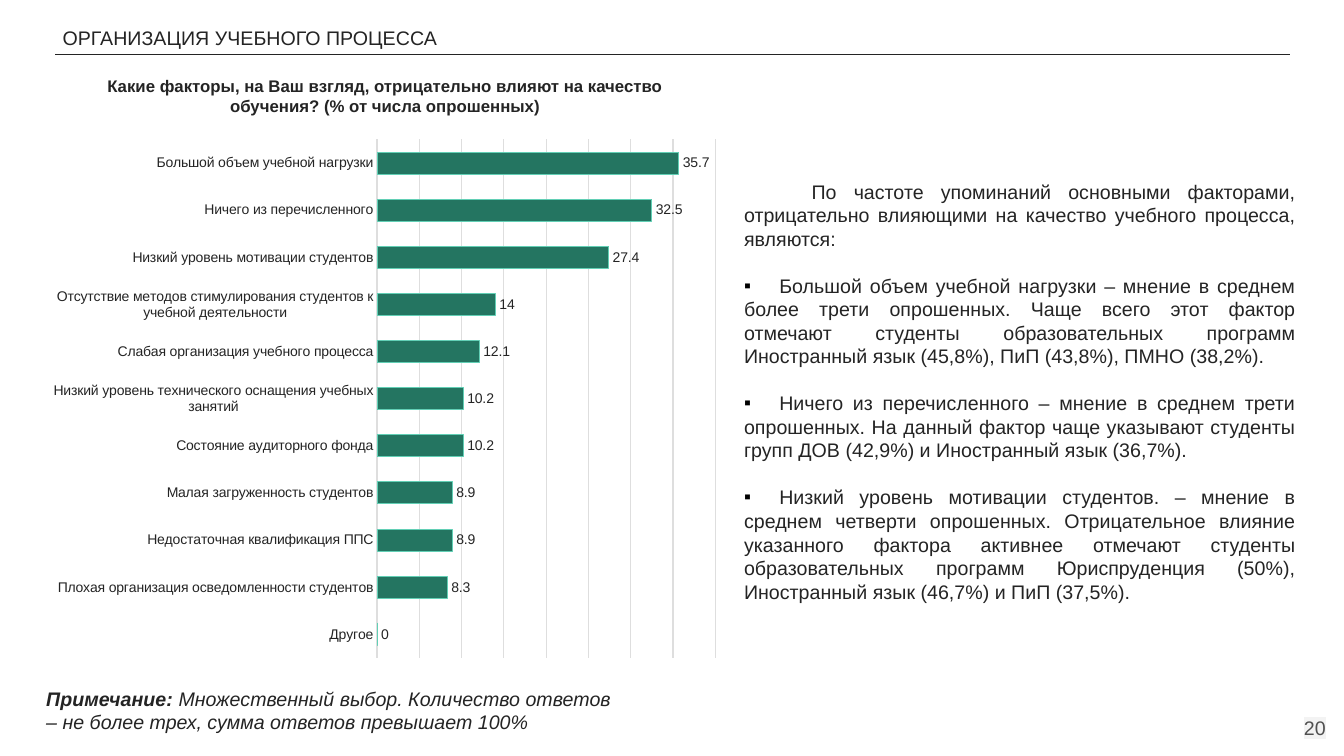
from lxml.etree import SubElement
from pptx import Presentation
from pptx.chart.data import CategoryChartData
from pptx.dml.color import RGBColor
from pptx.enum.chart import XL_CHART_TYPE as CT, XL_LABEL_POSITION as LP, XL_TICK_MARK as TM
from pptx.enum.shapes import MSO_CONNECTOR
from pptx.enum.text import MSO_ANCHOR as VA, MSO_AUTO_SIZE as FIT, PP_ALIGN as AL
from pptx.oxml import parse_xml
from pptx.oxml.ns import nsdecls, qn
from pptx.util import Inches, Pt

# Content
TITLE = "ОРГАНИЗАЦИЯ УЧЕБНОГО ПРОЦЕССА"
QUESTION = ("Какие факторы, на Ваш взгляд, отрицательно влияют на качество обучения? "
            "(% от числа опрошенных)")
FACTORS = [
    ("Большой объем учебной нагрузки", 35.7),
    ("Ничего из перечисленного", 32.5),
    ("Низкий уровень мотивации студентов", 27.4),
    ("Отсутствие методов стимулирования студентов к учебной деятельности", 14),
    ("Слабая организация учебного процесса", 12.1),
    ("Низкий уровень технического оснащения учебных занятий", 10.2),
    ("Состояние аудиторного фонда", 10.2),
    ("Малая загруженность студентов", 8.9),
    ("Недостаточная квалификация ППС", 8.9),
    ("Плохая организация осведомленности студентов", 8.3),
    ("Другое", 0),
]
INTRO = ("По частоте упоминаний основными факторами, отрицательно влияющими "
         "на качество учебного процесса, являются:")
FINDINGS = [
    "Большой объем учебной нагрузки – мнение в среднем более трети опрошенных. "
    "Чаще всего этот фактор отмечают студенты образовательных программ "
    "Иностранный язык (45,8%), ПиП (43,8%), ПМНО (38,2%).",
    "Ничего из перечисленного – мнение в среднем трети опрошенных. На данный фактор "
    "чаще указывают студенты групп ДОВ (42,9%) и Иностранный язык (36,7%).",
    "Низкий уровень мотивации студентов. – мнение в среднем четверти опрошенных. "
    "Отрицательное влияние указанного фактора активнее отмечают студенты "
    "образовательных программ Юриспруденция (50%), Иностранный язык (46,7%) и ПиП (37,5%).",
]
NOTE = ("Примечание:", " Множественный выбор. Количество ответов – не более трех, "
        "сумма ответов превышает 100%")
PAGE = "20"

# Theme and layout, lengths in inches
THEME = dict(font="Arial", ink="242424", page="505050", mark="F3F3F3", grid="DEDEDE",
             bar="247561", edge="62CFB5", bullet="000000",
             body=14, question=12, chart=10)
W, H = 13.33, 7.5
BOX = dict(
    title=(0.52, 0.16, 4.79, 0.27), question=(0.52, 0.51, 6.6, 0.71),
    chart=(0.22, 1.3, 7.03, 5.26), findings=(7.25, 1.42, 5.73, 5.68),
    note=(0.36, 6.57, 5.95, 0.77), page=(12.48, 6.93, 0.8, 0.57),
)
RULE = (0.55, 12.79, 0.54)
PLOT = dict(x=0.501, y=0.016, w=0.477, h=0.978)
INTRO_INDENT, BULLET_TAB = 0.67, 0.35


def rgb(name):
    return RGBColor.from_string(THEME[name])


def place(sp, box):
    for key, value in zip(("left", "top", "width", "height"), BOX[box]):
        setattr(sp, key, Inches(value))


def set_font(font, size="body", color="ink", **extra):
    for key, value in dict(name=THEME["font"], size=Pt(THEME[size]), **extra).items():
        setattr(font, key, value)
    font.color.rgb = rgb(color)


def set_line(line, color, width):
    line.color.rgb = rgb(color)
    line.width = Pt(width)


def set_frame(tf, side, top, anchor=VA.TOP):
    values = dict(word_wrap=True, auto_size=FIT.NONE, vertical_anchor=anchor,
                  margin_left=Inches(side), margin_right=Inches(side),
                  margin_top=Inches(top), margin_bottom=Inches(min(side, top)))
    for key, value in values.items():
        setattr(tf, key, value)


def text_box(box, side, top, anchor=VA.TOP):
    tf = slide.shapes.add_textbox(*map(Inches, BOX[box])).text_frame
    set_frame(tf, side, top, anchor)
    return tf


def write(p, text, align=AL.LEFT, **style):
    p.alignment = align
    r = p.add_run()
    r.text = text
    set_font(r.font, **style)
    return r


def add_bullet(p):
    pPr = p._p.get_or_add_pPr()
    pPr.set("marL", "0")
    pPr.set("indent", "0")
    color = SubElement(pPr, qn("a:buClr"))
    SubElement(color, qn("a:srgbClr"), val=THEME["bullet"])
    SubElement(pPr, qn("a:buFont"), typeface=THEME["font"])
    SubElement(pPr, qn("a:buChar"), char="▪")
    tabs = SubElement(pPr, qn("a:tabLst"))
    SubElement(tabs, qn("a:tab"), pos=str(Inches(BULLET_TAB)), algn="l")


prs = Presentation()
prs.slide_width, prs.slide_height = Inches(W), Inches(H)
slide = prs.slides.add_slide(prs.slide_layouts[5])

# Title and rule
title = slide.shapes.title
place(title, "title")
set_frame(title.text_frame, 0.1, 0.1)
write(title.text_frame.paragraphs[0], TITLE)
x1, x2, y = map(Inches, RULE)
rule = slide.shapes.add_connector(MSO_CONNECTOR.STRAIGHT, x1, y, x2, y)
set_line(rule.line, "ink", 0.75)
SubElement(rule._element.spPr, qn("a:effectLst"))

# Page number
r = write(text_box("page", 0.13, 0.13, VA.MIDDLE).paragraphs[0], PAGE, AL.RIGHT, color="page")
r.font.fill._xPr.find(qn("a:solidFill")).addnext(parse_xml(
    f'<a:highlight {nsdecls("a")}><a:srgbClr val="{THEME["mark"]}"/></a:highlight>'))

# Findings
tf = text_box("findings", 0.13, 0.36)
intro = tf.paragraphs[0]
write(intro, INTRO, AL.JUSTIFY)
intro._p.get_or_add_pPr().set("indent", str(Inches(INTRO_INDENT)))
for finding in FINDINGS:
    p = tf.add_paragraph()
    write(p, "\t" + finding, AL.JUSTIFY)
    p.space_before = Pt(16.8)
    add_bullet(p)

# Note
p = text_box("note", 0.1, 0.24).paragraphs[0]
for text, bold in zip(NOTE, (True, False)):
    write(p, text, bold=bold, italic=True)

# Bar chart
data = CategoryChartData()
data.categories = [name for name, _ in FACTORS]
data.add_series("Series 1", [value for _, value in FACTORS])
chart = slide.shapes.add_chart(CT.BAR_CLUSTERED, *map(Inches, BOX["chart"]), data).chart
chart.has_title = chart.has_legend = False
set_font(chart.font, "chart")

cat = chart.category_axis
cat.reverse_order = True
cat.major_tick_mark = cat.minor_tick_mark = TM.NONE
set_font(cat.tick_labels.font, "chart")
set_line(cat.format.line, "grid", 1)

val = chart.value_axis
for key, value in dict(visible=False, minimum_scale=0, maximum_scale=40, major_unit=5,
                       has_major_gridlines=True).items():
    setattr(val, key, value)
set_line(val.major_gridlines.format.line, "grid", 0.75)

bars = chart.plots[0]
for key, value in dict(gap_width=115, overlap=-20, vary_by_categories=False,
                       has_data_labels=True).items():
    setattr(bars, key, value)
labels = bars.data_labels
labels.show_value, labels.position = True, LP.OUTSIDE_END
set_font(labels.font, "chart")
fill = bars.series[0].format.fill
fill.solid()
fill.fore_color.rgb = rgb("bar")
set_line(bars.series[0].format.line, "edge", 0.75)

# Fixed plot area
area = chart._chartSpace.chart.plotArea
for old in area.findall(qn("c:layout")):
    area.remove(old)
marks = '<c:layoutTarget val="inner"/><c:xMode val="edge"/><c:yMode val="edge"/>'
marks += "".join(f'<c:{key} val="{value}"/>' for key, value in PLOT.items())
area.insert(0, parse_xml(
    f'<c:layout {nsdecls("c")}><c:manualLayout>{marks}</c:manualLayout></c:layout>'))

# Chart question
write(text_box("question", 0.1, 0.24).paragraphs[0], QUESTION, AL.CENTER,
      size="question", bold=True)

prs.save("out.pptx")
